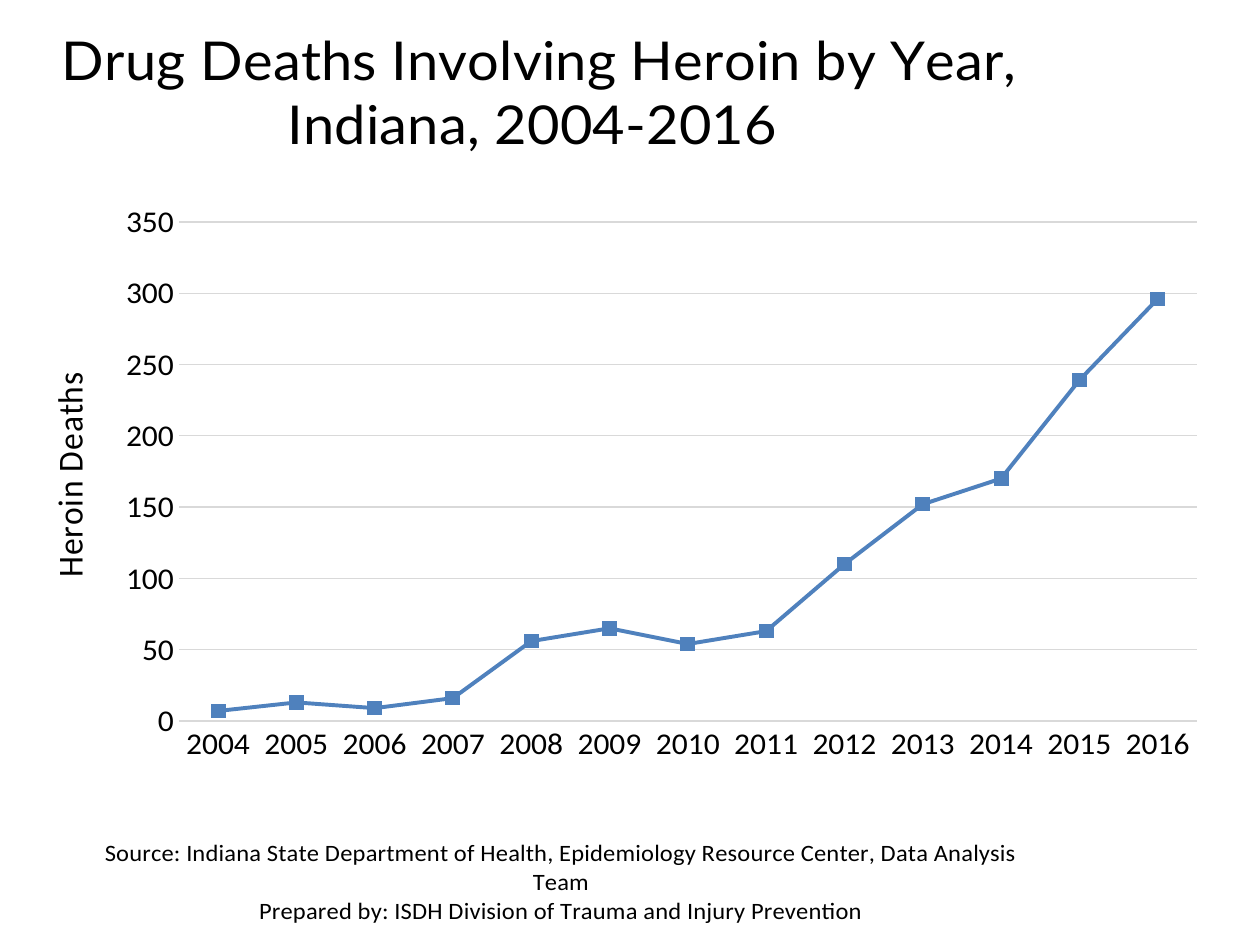
from lxml import etree
from pptx import Presentation
from pptx import util as u
from pptx.chart.data import CategoryChartData
from pptx.dml.color import RGBColor
from pptx.enum import chart as charts
from pptx.oxml import ns

PX = u.Inches(1) / 126
COLORS = {"text": "000000", "grid": "D9D9D9", "deaths": "4F81BD"}

DEATHS = {
    "2004": 7, "2005": 13, "2006": 9, "2007": 16, "2008": 56, "2009": 65, "2010": 54,
    "2011": 63, "2012": 110, "2013": 152, "2014": 170, "2015": 239, "2016": 296,
}
TITLE = ["Drug Deaths Involving Heroin by Year,", "Indiana, 2004-2016 "]
VALUE_TITLE = ["Heroin Deaths"]
SOURCE = [
    "Source: Indiana State Department of Health, Epidemiology Resource Center, Data Analysis Team",
    "Prepared by: ISDH Division of Trauma and Injury Prevention",
]
CHART = (15, 20, 1206, 912)
PLOT = (179, 231, 1018, 521)


def px(value):
    return u.Emu(round(value * PX))


def color(name):
    return RGBColor.from_string(COLORS[name])


def set_font(font, size, name="Calibri"):
    font.size, font.name, font.bold = u.Pt(size), name, False
    font.color.rgb = color("text")


def set_line(line, name, width):
    line.color.rgb = color(name)
    line.width = u.Pt(width)


def make_layout(left, top, size=None):
    fractions = {"x": (left - CHART[0]) / CHART[2], "y": (top - CHART[1]) / CHART[3]}
    if size:
        fractions.update(w=size[0] / CHART[2], h=size[1] / CHART[3])
    layout = etree.Element(ns.qn("c:layout"))
    manual = etree.SubElement(layout, ns.qn("c:manualLayout"))
    if size:
        etree.SubElement(manual, ns.qn("c:layoutTarget"), val="inner")
    for key in ("x", "y"):
        etree.SubElement(manual, ns.qn(f"c:{key}Mode"), val="edge")
    for key, value in fractions.items():
        etree.SubElement(manual, ns.qn(f"c:{key}"), val=f"{value:.4f}")
    return layout


def remove_layout(element):
    for layout in element.findall(ns.qn("c:layout")):
        element.remove(layout)


def write_title(title, lines, size, left, top, font="Calibri"):
    frame = title.text_frame
    frame.text = "\n".join(lines)
    for paragraph in frame.paragraphs:
        set_font(paragraph.font, size, font)
        for run in paragraph.runs:
            set_font(run.font, size, font)
    element = title._element
    remove_layout(element)
    element.find(ns.qn("c:tx")).addnext(make_layout(left, top))


presentation = Presentation()
presentation.slide_width, presentation.slide_height = u.Inches(10), u.Inches(7.5)
slide = presentation.slides.add_slide(presentation.slide_layouts[6])

data = CategoryChartData()
data.categories = list(DEATHS)
data.add_series("Series 1", list(DEATHS.values()))
chart = slide.shapes.add_chart(
    charts.XL_CHART_TYPE.LINE_MARKERS, *map(px, CHART), data
).chart
set_font(chart.font, 10)
chart.has_legend = False
chart.has_title = True
write_title(chart.chart_title, TITLE, 32, 58, 22, "Lato")

category_axis, value_axis = chart.category_axis, chart.value_axis
for axis in (category_axis, value_axis):
    axis.major_tick_mark = axis.minor_tick_mark = charts.XL_TICK_MARK.NONE
    axis.has_title = True
    set_font(axis.tick_labels.font, 18)
write_title(category_axis.axis_title, SOURCE, 14, 101, 869)
write_title(value_axis.axis_title, VALUE_TITLE, 20, 38, 390)
set_line(category_axis.format.line, "grid", 0.75)
value_axis.format.line.fill.background()
value_axis.has_major_gridlines = True
set_line(value_axis.major_gridlines.format.line, "grid", 0.75)

plot = chart.plots[0]
plot.vary_by_categories = False
series = plot.series[0]
series.smooth = False
set_line(series.format.line, "deaths", 2.25)
marker = series.marker
marker.style, marker.size = charts.XL_MARKER_STYLE.SQUARE, 8
marker.format.fill.solid()
marker.format.fill.fore_color.rgb = color("deaths")
set_line(marker.format.line, "deaths", 0.75)

plot_area = chart._chartSpace.find(".//" + ns.qn("c:plotArea"))
remove_layout(plot_area)
plot_area.insert(0, make_layout(PLOT[0], PLOT[1], PLOT[2:]))

presentation.save("out.pptx")
